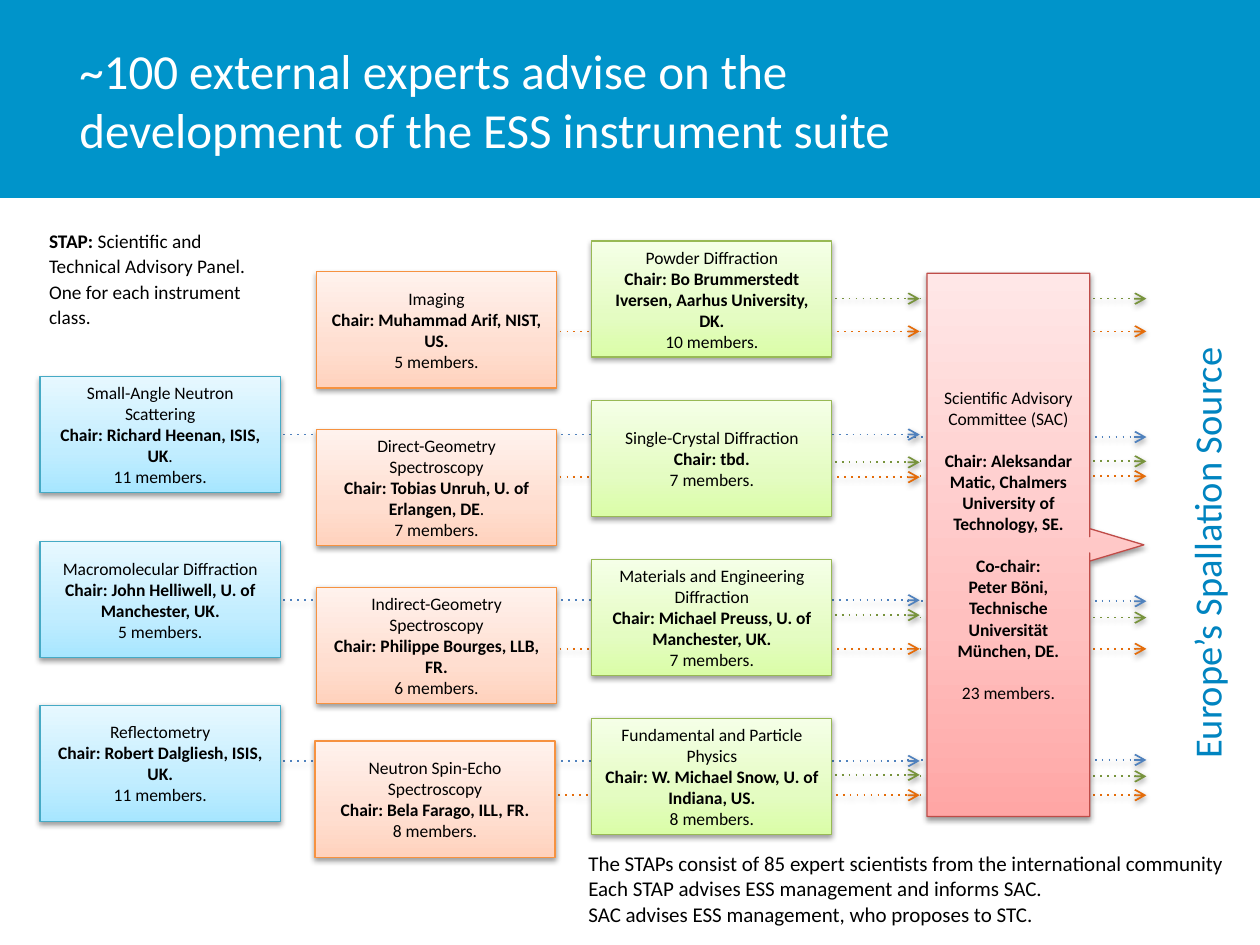
from lxml import etree
from pptx import Presentation
from pptx import util as u
from pptx.dml.color import RGBColor
from pptx.enum import shapes, text
from pptx.oxml.ns import qn

Cm, Pt = u.Cm, u.Pt
FONT = "Calibri"
COLORS = {
    "band": "0094CA", "side": "0084C0", "white": "FFFFFF", "black": "000000",
    "blue": "4F81BD", "orange": "E46C0A", "green": "77933C",
}
# Gradient stops run from the bottom of a box to its top.
STYLES = {
    "blue": (("A7E6FF", "C1EDFF", "E7F8FF"), "46AAC5"),
    "orange": (("FFD2BD", "FFDED0", "FFF2ED"), "F69240"),
    "green": (("DAFDA7", "E4FCC2", "F5FFE7"), "98B955"),
    "red": (("FFA6A5", "FFC0BF", "FFE7E7"), "BF4C48"),
}
STOPS = (0, 35000, 100000)

TITLE = "~100 external experts advise on the development of the ESS instrument suite"
INTRO = "*STAP:* Scientific and Technical Advisory Panel. One for each instrument class."
SIDE = "Europe’s Spallation Source"
NOTES = [
    "The STAPs consist of 85 expert scientists from the international community",
    "Each STAP advises ESS management and informs SAC.",
    "SAC advises ESS management, who proposes to STC.",
]
# Asterisks enclose bold text.
# Panel: left, top, arrow height before and inside the committee, lines
PANELS = {
    "blue": [
        (0.81, 7.59, 8.76, 8.81, ["Small-Angle Neutron Scattering",
         "*Chair: Richard Heenan, ISIS, UK*.", "11 members."]),
        (0.81, 10.92, 12.1, 12.12, ["Macromolecular Diffraction",
         "*Chair: John Helliwell, U. of Manchester, UK.*", "5 members."]),
        (0.81, 14.22, 15.34, 15.32, ["Reflectometry",
         "*Chair: Robert Dalgliesh, ISIS, UK.*", "11 members."]),
    ],
    "orange": [
        (6.38, 5.48, 6.68, 6.68, ["Imaging",
         "*Chair: Muhammad Arif, NIST, US.*", "5 members."]),
        (6.38, 8.66, 9.62, 9.6, ["Direct-Geometry Spectroscopy",
         "*Chair: Tobias Unruh, U. of Erlangen, DE*.", "7 members."]),
        (6.38, 11.84, 13.08, 13.08, ["Indirect-Geometry Spectroscopy",
         "*Chair: Philippe Bourges, LLB, FR.*", "6 members."]),
        (6.35, 14.94, 16.03, 16.03, ["Neutron Spin-Echo Spectroscopy",
         "*Chair: Bela Farago, ILL, FR.*", "8 members."]),
    ],
    "green": [
        (11.93, 4.86, 6.02, 6.02, ["Powder Diffraction",
         "*Chair: Bo Brummerstedt Iversen, Aarhus University, DK.*", "10 members."]),
        (11.93, 8.07, 9.32, 9.3, ["Single-Crystal Diffraction",
         "*Chair: tbd.*", "7 members."]),
        (11.93, 11.28, 12.4, 12.45, ["Materials and Engineering Diffraction",
         "*Chair: Michael Preuss, U. of Manchester, UK.*", "7 members."]),
        (11.93, 14.48, 15.62, 15.65, ["Fundamental and Particle Physics",
         "*Chair: W. Michael Snow, U. of Indiana, US.*", "8 members."]),
    ],
}
SAC = [
    "Scientific Advisory Committee (SAC)",
    "*Chair: Aleksandar Matic, Chalmers University of Technology, SE.*",
    "*Co-chair:*",
    "*Peter Böni, Technische Universität München, DE.*",
    "23 members.",
]
SAC_GAPS = {1: 12, 2: 12, 4: 12}
WIDTH, HEIGHT = 4.84, 2.34
JOIN, END = 18.54, 23.11
SHIFT = {"blue": 18.29}


def rgb(name):
    return RGBColor.from_string(COLORS.get(name, name))


def place(shape, *box):
    shape.left, shape.top, shape.width, shape.height = map(Cm, box)


def sub(node, tag, **attrs):
    return etree.SubElement(node, qn("a:" + tag), attrs)


def write(frame, lines, size, color="black", align="LEFT", gaps={}, plain=False):
    """Fill a text frame; gaps maps a line's index to its space before."""
    frame.word_wrap = True
    for i, line in enumerate(lines):
        para = frame.add_paragraph() if i else frame.paragraphs[0]
        if plain:
            props = para._p.get_or_add_pPr()
            props.set("marL", "0")
            props.set("indent", "0")
            sub(props, "buNone")
        para.alignment = getattr(text.PP_ALIGN, align)
        para.space_before = Pt(gaps.get(i, 0))
        font = para.font
        font.name, font.size, font.color.rgb = FONT, Pt(size), rgb(color)
        parts = line.split("*")
        for j, part in enumerate(parts):
            if part:
                run = para.add_run()
                run.text = part
                if len(parts) > 1:
                    run.font.bold = j % 2 == 1


def shade(effects):
    shadow = sub(effects, "outerShdw", blurRad="40000", dist="20000",
                 dir="5400000", rotWithShape="0")
    sub(sub(shadow, "srgbClr", val=COLORS["black"]), "alpha", val="38000")


def add_box(kind, style, box, lines, gaps={}):
    shape = slide.shapes.add_shape(kind, *map(Cm, box))
    tones, edge = STYLES[style]
    shape.fill.gradient()
    shape.fill.gradient_angle = 90
    props = shape._element.spPr
    stops = props.find(qn("a:gradFill")).find(qn("a:gsLst"))
    for old in list(stops):
        stops.remove(old)
    for pos, tone in zip(STOPS, tones):
        sub(sub(stops, "gs", pos=str(pos)), "srgbClr", val=tone)
    shape.line.color.rgb = rgb(edge)
    shape.line.width = Pt(0.75)
    shape.shadow.inherit = False
    shade(props.find(qn("a:effectLst")))
    shape.text_frame.vertical_anchor = text.MSO_ANCHOR.MIDDLE
    write(shape.text_frame, lines, 10, align="CENTER", gaps=gaps)
    return shape


def add_arrow(left, right, y, color):
    arrow = slide.shapes.add_connector(
        shapes.MSO_CONNECTOR.STRAIGHT, Cm(left), Cm(y), Cm(right), Cm(y))
    arrow.line.color.rgb = rgb(color)
    arrow.line.width = Pt(1)
    line = arrow.line._get_or_add_ln()
    sub(line, "prstDash", val="dot")
    sub(line, "tailEnd", type="arrow")
    shade(sub(arrow._element.spPr, "effectLst"))


def add_text(box, lines, size, color="black"):
    shape = slide.shapes.add_textbox(*map(Cm, box))
    write(shape.text_frame, lines, size, color)
    return shape


def set_holder(holder, box, lines, size, color, anchor, plain=False):
    place(holder, *box)
    frame = holder.text_frame
    frame.auto_size = text.MSO_AUTO_SIZE.NONE
    frame.margin_left = frame.margin_right = frame.margin_top = frame.margin_bottom = 0
    frame.vertical_anchor = anchor
    write(frame, lines, size, color, plain=plain)


deck = Presentation()
deck.slide_width, deck.slide_height = Cm(25.4), Cm(19.05)
slide = deck.slides.add_slide(deck.slide_layouts[1])

band = slide.shapes.add_shape(shapes.MSO_SHAPE.RECTANGLE, 0, 0, Cm(25.4), Cm(3.99))
band.fill.solid()
band.fill.fore_color.rgb = rgb("band")
band.line.fill.background()
band.shadow.inherit = False
slide.shapes._spTree.insert(2, band._element)

set_holder(slide.shapes.title, (1.6, 0, 16.87, 4.01), [TITLE], 28, "white",
           text.MSO_ANCHOR.MIDDLE)
set_holder(slide.placeholders[1], (11.86, 17.15, 13.18, 1.73), NOTES, 12, "black",
           text.MSO_ANCHOR.TOP, plain=True)

for color, panels in PANELS.items():
    for left, top, near, far, lines in panels:
        add_arrow(SHIFT.get(color, JOIN), END, far, color)
        add_arrow(left + WIDTH + 0.06, JOIN, near, color)
        add_box(shapes.MSO_SHAPE.FLOWCHART_PROCESS, color,
                (left, top, WIDTH, HEIGHT), lines)

intro = add_text((0.74, 4.45, 4.93, 2.34), [INTRO], 11)
intro.text_frame.paragraphs[0].line_spacing = 1.1
side = add_text((19.84, 10.49, 8.94, 1.17), [SIDE], 22, "side")
side.text_frame.word_wrap = False
side.rotation = 270

callout = add_box(shapes.MSO_SHAPE.RIGHT_ARROW_CALLOUT, "red",
                  (18.69, 5.51, 4.37, 10.95), SAC, SAC_GAPS)
for i, value in enumerate((0.075, 0.075, 0.25, 0.75)):
    callout.adjustments[i] = value

deck.save("out.pptx")
